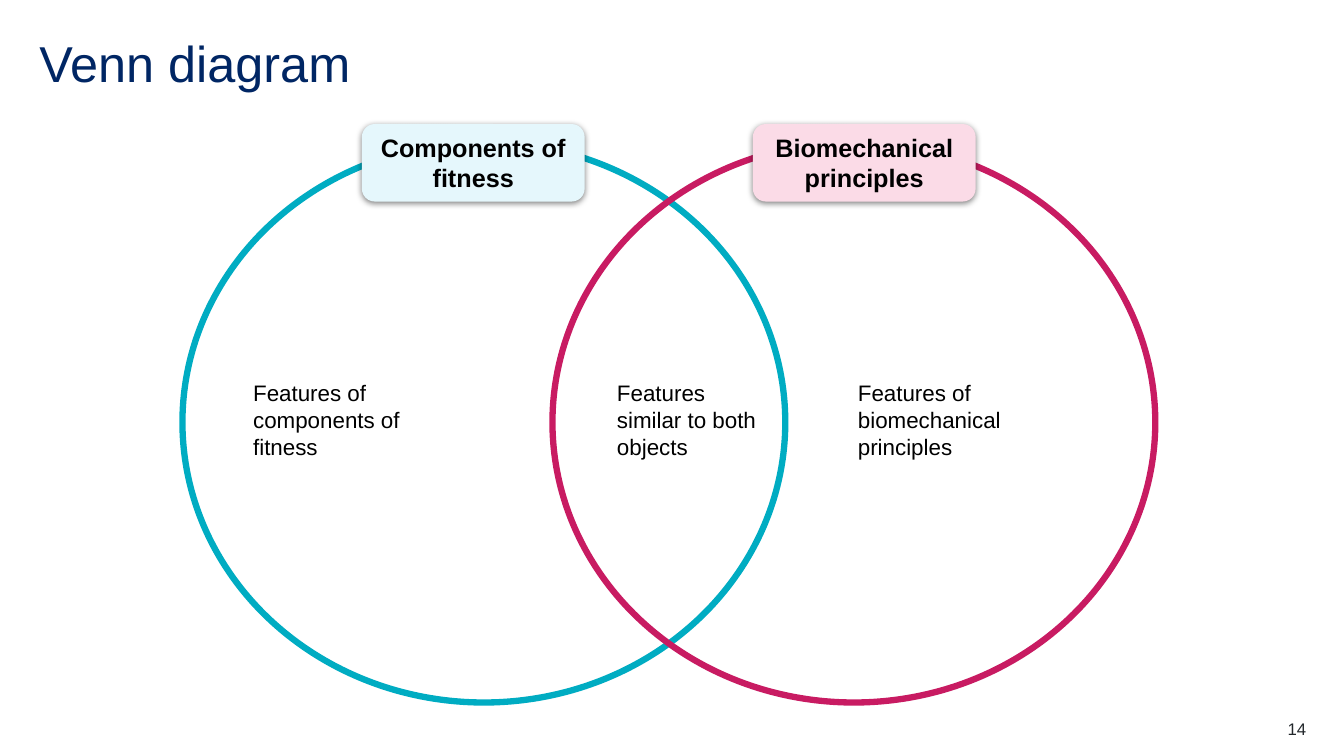
from lxml import etree
from pptx import Presentation
from pptx import util as u
from pptx.dml.color import RGBColor
from pptx.enum import shapes, text
from pptx.oxml import ns

NAVY = RGBColor(0x00, 0x26, 0x64)
TEAL = RGBColor(0x00, 0xAC, 0xC2)
PINK = RGBColor(0xC8, 0x1B, 0x62)
ICE = RGBColor(0xE5, 0xF7, 0xFC)
BLUSH = RGBColor(0xFB, 0xDB, 0xE7)
BLACK = RGBColor(0x00, 0x00, 0x00)
GREY = RGBColor(0x22, 0x27, 0x2B)

SETS = (
    ("Components of fitness", TEAL, ICE, 130.3, 258.5,
     "Features of components of fitness", 171.4, 171.4),
    ("Biomechanical principles", PINK, BLUSH, 394.6, 537.8,
     "Features of biomechanical principles", 603.4, 180),
)


def assign(item, values):
    """Set each named attribute of the item."""
    for name, value in values.items():
        setattr(item, name, value)


def write(shape, words, size, color, pad=(0, 0), bold=False,
          align=text.PP_ALIGN.LEFT, anchor=text.MSO_ANCHOR.TOP):
    """Fill a shape with one formatted paragraph and return it."""
    side, edge = u.Pt(pad[0]), u.Pt(pad[1])
    frame = shape.text_frame
    assign(frame, {
        "text": words, "word_wrap": True, "vertical_anchor": anchor,
        "auto_size": text.MSO_AUTO_SIZE.NONE,
        "margin_left": side, "margin_right": side,
        "margin_top": edge, "margin_bottom": edge})
    para = frame.paragraphs[0]
    para.alignment = align
    font = para.runs[0].font
    assign(font, {"name": "Arial", "size": u.Pt(size), "bold": bold})
    font.color.rgb = color
    return para


def add_note(slide, words, box, size=16, color=BLACK, pad=(9.4, 9.4),
             align=text.PP_ALIGN.LEFT):
    """Add a wrapped text box."""
    note = slide.shapes.add_textbox(*map(u.Pt, box))
    write(note, words, size, color, pad, align=align)


def add_ring(group, color, left):
    """Add one unfilled circle of the diagram."""
    ring = group.shapes.add_shape(
        shapes.MSO_SHAPE.OVAL, *map(u.Pt, (left, 101.5, 430.6, 400.3)))
    ring.shadow.inherit = False
    ring.fill.background()
    ring.line.color.rgb = color
    ring.line.width = u.Pt(4.5)


def add_label(group, words, color, left):
    """Add a rounded heading with a soft shadow."""
    label = group.shapes.add_shape(
        shapes.MSO_SHAPE.ROUNDED_RECTANGLE,
        *map(u.Pt, (left, 88.6, 159.1, 55.4)))
    label.fill.solid()
    label.fill.fore_color.rgb = color
    label.line.fill.background()
    write(label, words, 18, BLACK, (6.5, 2.9), True,
          text.PP_ALIGN.CENTER, text.MSO_ANCHOR.MIDDLE)
    label.shadow.inherit = False
    effects = label.element.spPr.find(ns.qn("a:effectLst"))
    shade = etree.SubElement(
        effects, ns.qn("a:outerShdw"), blurRad=str(u.Pt(4.5)),
        dist=str(u.Pt(1.5)), dir="5400000", algn="t", rotWithShape="0")
    tint = etree.SubElement(shade, ns.qn("a:srgbClr"), val=str(BLACK))
    etree.SubElement(tint, ns.qn("a:alpha"), val="50000")


def add_title(slide, words):
    """Place and format the title placeholder."""
    title = slide.shapes.title
    assign(title, {"left": u.Pt(28.1), "top": u.Pt(28.1),
                   "width": u.Pt(904.3), "height": u.Pt(43.2)})
    write(title, words, 36, NAVY).line_spacing = 0.9


def main():
    """Build and save the Venn slide."""
    deck = Presentation()
    assign(deck, {"slide_width": u.Pt(960), "slide_height": u.Pt(540)})
    slide = deck.slides.add_slide(deck.slide_layouts[5])
    add_title(slide, "Venn diagram")
    for head, line, fill, ring, label, words, left, width in SETS:
        group = slide.shapes.add_group_shape()
        add_ring(group, line, ring)
        add_label(group, head, fill, label)
        add_note(slide, words, (left, 261.4, width, 38.2))
    add_note(slide, "Features similar to both objects",
             (431.3, 261.4, 118.8, 80.6))
    add_note(slide, "14", (876.2, 513.4, 56.9, 14.4), 12, GREY, (0, 0),
             text.PP_ALIGN.RIGHT)
    deck.save("out.pptx")


if __name__ == "__main__":
    main()
